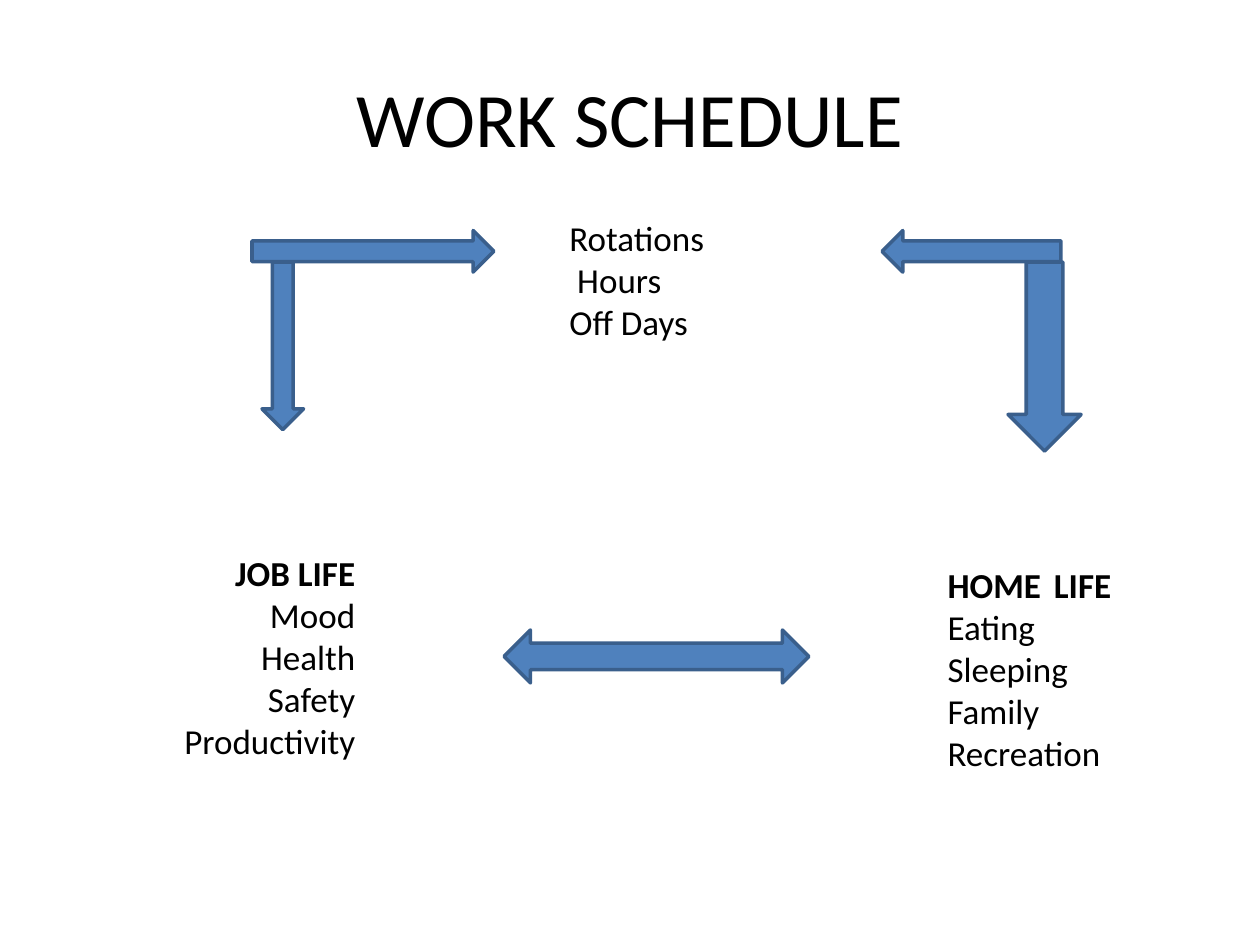
"""Build the work schedule slide linking rotations, job life and home life."""
from dataclasses import dataclass

from lxml import etree
from pptx import Presentation
from pptx import util as u
from pptx.dml.color import RGBColor
from pptx.enum import shapes, text
from pptx.oxml import ns

BLACK = RGBColor(0x00, 0x00, 0x00)
BLUE = RGBColor(0x4F, 0x81, 0xBD)
DARK_BLUE = RGBColor(0x3A, 0x5F, 0x8C)
FONT = "Calibri"
Box = tuple[float, float, float, float]


@dataclass
class TopicList:
    box: Box
    align: text.PP_ALIGN
    paragraphs: list[list[str]]
    heading: str = ""


@dataclass
class Arrow:
    kind: shapes.MSO_SHAPE
    box: Box


ROTATIONS = TopicList(
    (4.42, 1.67, 2.75, 1.11), text.PP_ALIGN.JUSTIFY,
    [["Rotations"], [" Hours"], ["Off Days"]],
)
JOB_LIFE = TopicList(
    (0.92, 4.33, 2, 1.78), text.PP_ALIGN.RIGHT,
    [["JOB LIFE"], ["Mood"], ["Health"], ["Safety Productivity"]], "JOB LIFE",
)
HOME_LIFE = TopicList(
    (7.42, 4.42, 1.5, 1.78), text.PP_ALIGN.JUSTIFY,
    [["HOME LIFE ", "Eating Sleeping Family Recreation"]], "HOME LIFE ",
)
ARROWS = [
    Arrow(shapes.MSO_SHAPE.RIGHT_ARROW, (2, 1.83, 1.92, 0.33)),
    Arrow(shapes.MSO_SHAPE.DOWN_ARROW, (2.08, 2.08, 0.33, 1.33)),
    Arrow(shapes.MSO_SHAPE.LEFT_RIGHT_ARROW, (4, 5, 2.42, 0.42)),
    Arrow(shapes.MSO_SHAPE.DOWN_ARROW, (8, 2.08, 0.58, 1.5)),
    Arrow(shapes.MSO_SHAPE.LEFT_ARROW, (7, 1.83, 1.42, 0.33)),
]


def place(sp, box: Box) -> None:
    sp.left, sp.top, sp.width, sp.height = map(u.Inches, box)


def style_run(r, size: float, bold: bool = False) -> None:
    r.font.name = FONT
    r.font.size = u.Pt(size)
    r.font.bold = bold
    r.font.color.rgb = BLACK


def remove_bullet(p) -> None:
    pPr = p._p.get_or_add_pPr()
    pPr.set("marL", "0")
    pPr.set("indent", "0")
    etree.SubElement(pPr, ns.qn("a:buNone"))


def fill_list(sp, topic: TopicList) -> None:
    place(sp, topic.box)
    tf = sp.text_frame
    tf.word_wrap = True
    tf.auto_size = text.MSO_AUTO_SIZE.SHAPE_TO_FIT_TEXT
    for i, parts in enumerate(topic.paragraphs):
        p = tf.add_paragraph() if i else tf.paragraphs[0]
        p.alignment = topic.align
        p.space_before = u.Pt(0)
        remove_bullet(p)
        for part in parts:
            r = p.add_run()
            r.text = part
            style_run(r, 20, part == topic.heading)


def draw_arrow(s, arrow: Arrow) -> None:
    sp = s.shapes.add_shape(arrow.kind, *map(u.Inches, arrow.box))
    sp.shadow.inherit = False
    sp.fill.solid()
    sp.fill.fore_color.rgb = BLUE
    sp.line.color.rgb = DARK_BLUE
    sp.line.width = u.Pt(2)


def main() -> None:
    prs = Presentation()
    prs.slide_width, prs.slide_height = u.Inches(10), u.Inches(7.5)
    s = prs.slides.add_slide(prs.slide_layouts.get_by_name("Two Content"))

    title = s.shapes.title
    place(title, (0.5, 0.3, 9, 1.25))
    title.text_frame.text = "WORK SCHEDULE"
    p = title.text_frame.paragraphs[0]
    p.alignment = text.PP_ALIGN.CENTER
    style_run(p.runs[0], 44)

    fill_list(s.shapes.add_textbox(*map(u.Inches, ROTATIONS.box)), ROTATIONS)
    fill_list(s.placeholders[1], JOB_LIFE)
    fill_list(s.placeholders[2], HOME_LIFE)
    for arrow in ARROWS:
        draw_arrow(s, arrow)
    prs.save("out.pptx")


if __name__ == "__main__":
    main()
